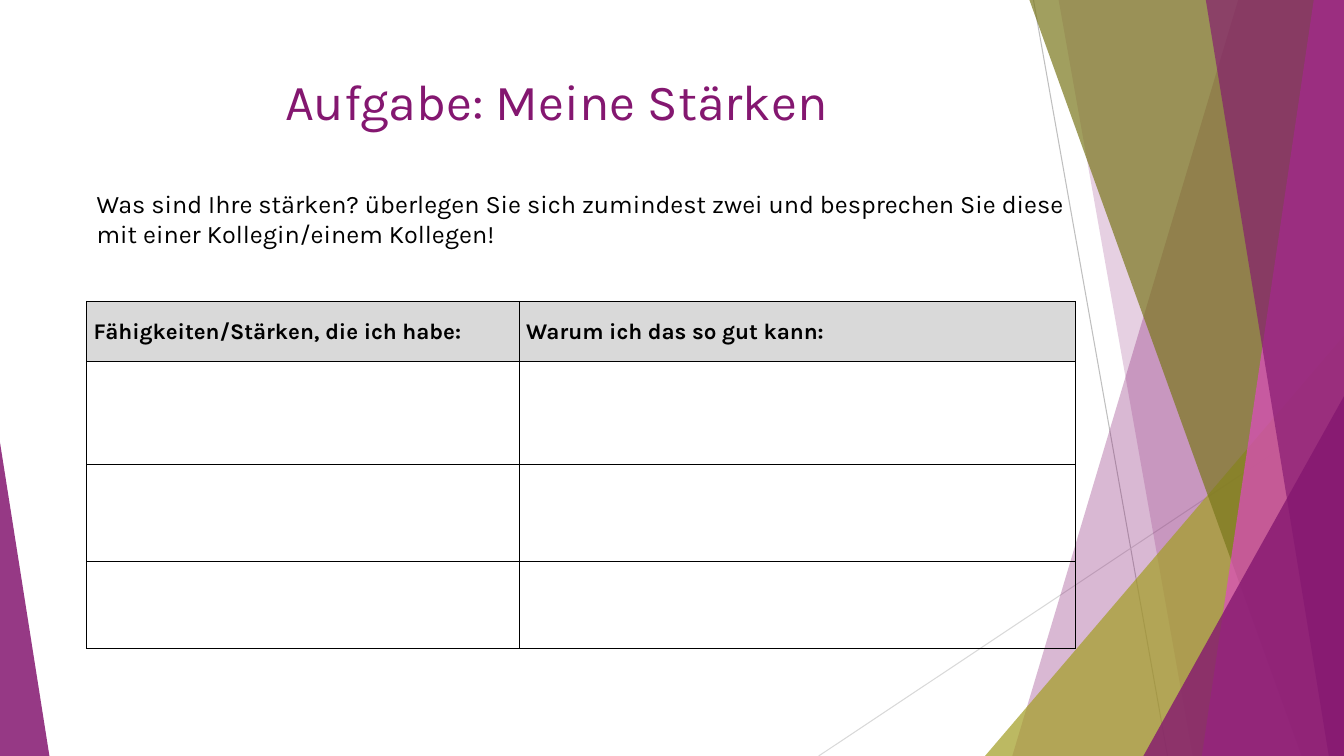
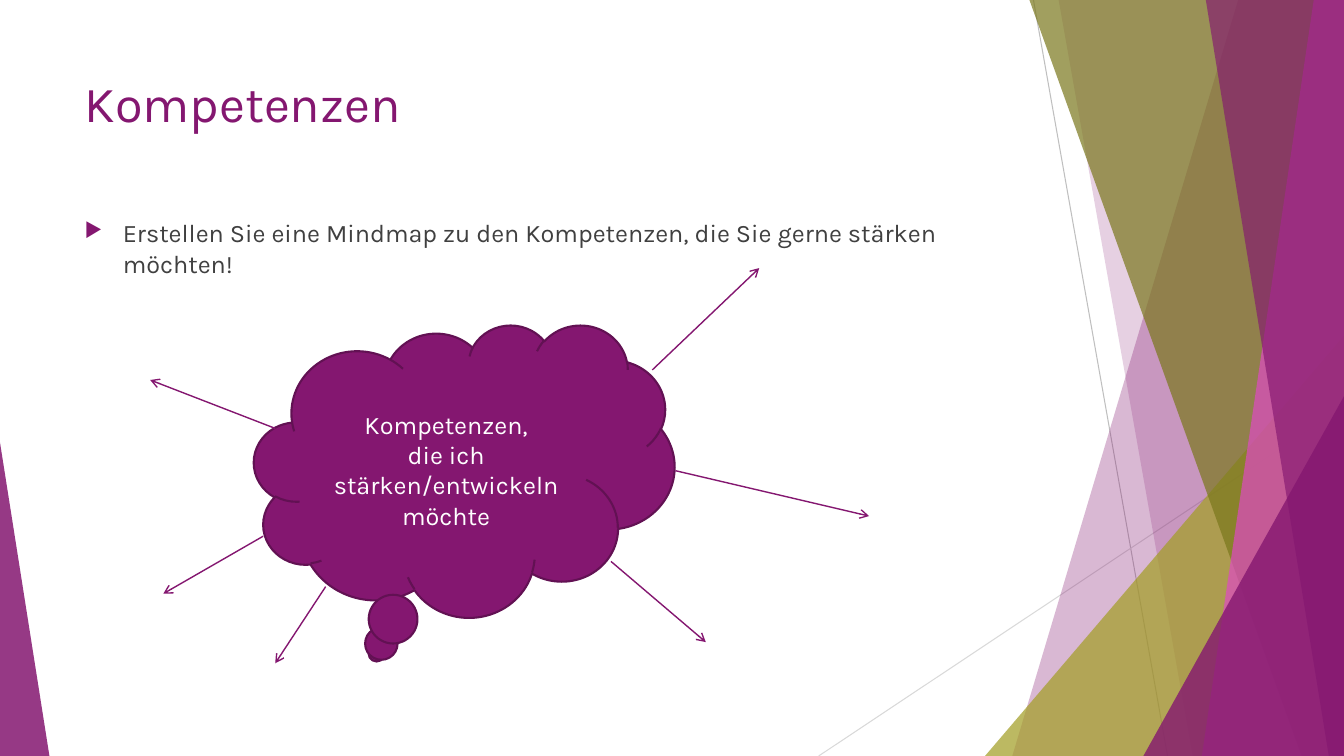
from pptx import Presentation
from pptx.dml.color import RGBColor
from pptx.enum.shapes import MSO_CONNECTOR, MSO_SHAPE
from pptx.enum.text import MSO_ANCHOR, PP_ALIGN
from pptx.oxml.ns import qn
from pptx.util import Pt
from lxml.etree import SubElement

PX = 9144  # EMU, 100 px to the inch
WIDTH, HEIGHT = 1333, 750
FONT = "Karla"

PURPLE = RGBColor(0x84, 0x17, 0x70)
DARK_PURPLE = RGBColor(0x62, 0x11, 0x53)
PINK = RGBColor(0xDF, 0x4A, 0xC4)
OLIVE = RGBColor(0xA3, 0x9E, 0x26)
DARK_OLIVE = RGBColor(0x7A, 0x77, 0x1C)
WHITE = RGBColor(0xFF, 0xFF, 0xFF)
BLACK = RGBColor(0x00, 0x00, 0x00)
BODY_GRAY = RGBColor(0x40, 0x40, 0x40)
LINE_GRAY = RGBColor(0xBF, 0xBF, 0xBF)
LIGHT_GRAY = RGBColor(0xD9, 0xD9, 0xD9)


def px(*lengths):
    return [length * PX for length in lengths]


def fill_flat(shape, color, opacity):
    """Fill without outline or shadow; opacity is in percent."""
    shape.shadow.inherit = False
    shape.line.fill.background()
    shape.fill.solid()
    shape.fill.fore_color.rgb = color
    tone = shape.fill._xPr.find(qn("a:solidFill"))[0]
    SubElement(tone, qn("a:alpha"), val=str(opacity * 1000))


def add_band(slide, top_x, bottom_x, color, opacity):
    """Slanted band that reaches from its left edge to the slide's right edge."""
    builder = slide.shapes.build_freeform(top_x, 0, scale=PX)
    builder.add_line_segments([(WIDTH, 0), (WIDTH, HEIGHT), (bottom_x, HEIGHT)])
    fill_flat(builder.convert_to_shape(), color, opacity)


def add_wedge(slide, left, top, width, apex, color, opacity):
    """Triangle standing on the slide's bottom; apex 0 is left, 1 is right."""
    wedge = slide.shapes.add_shape(
        MSO_SHAPE.ISOSCELES_TRIANGLE, *px(left, top, width, HEIGHT - top))
    wedge.adjustments[0] = apex
    fill_flat(wedge, color, opacity)


def add_line(slide, start, end, color, weight, arrow=False):
    line = slide.shapes.add_connector(MSO_CONNECTOR.STRAIGHT, *px(*start, *end))
    line.line.color.rgb = color
    line.line.width = Pt(weight)
    if arrow:
        SubElement(line.line._get_or_add_ln(), qn("a:tailEnd"), type="arrow")
    SubElement(line._element.spPr, qn("a:effectLst"))


def style_paragraph(paragraph, size, color, align, bold=False):
    paragraph.alignment = align
    font = paragraph.font
    font.name, font.size, font.bold = FONT, Pt(size), bold
    font.color.rgb = color


def add_text(slide, box, lines, size, color, align=PP_ALIGN.LEFT):
    frame = slide.shapes.add_textbox(*px(*box)).text_frame
    frame.word_wrap = True
    frame.text = "\n".join(lines)
    for paragraph in frame.paragraphs:
        style_paragraph(paragraph, size, color, align)
    return frame


def add_bullet(paragraph, indent):
    paragraph.space_before = Pt(10)
    properties = paragraph._p.get_or_add_pPr()
    properties.set("marL", str(indent * PX))
    properties.set("indent", str(-indent * PX))
    tint = SubElement(properties, qn("a:buClr"))
    SubElement(tint, qn("a:srgbClr"), val=str(PURPLE))
    size = SubElement(properties, qn("a:buSzPct"), val="80000")
    mark = SubElement(properties, qn("a:buChar"), char="▶")
    run_defaults = properties.find(qn("a:defRPr"))
    for part in (tint, size, mark):
        run_defaults.addprevious(part)


def add_borders(cell, color, weight):
    properties = cell._tc.get_or_add_tcPr()
    for position, side in enumerate(("lnL", "lnR", "lnT", "lnB")):
        border = SubElement(properties, qn(f"a:{side}"), w=str(Pt(weight)))
        fill = SubElement(border, qn("a:solidFill"))
        SubElement(fill, qn("a:srgbClr"), val=str(color))
        properties.insert(position, border)


def add_answer_table(slide, left, top, columns, rows, headings):
    """Table with a gray heading row above empty rows to fill in."""
    table = slide.shapes.add_table(
        len(rows), len(columns), *px(left, top, sum(columns), sum(rows))).table
    for column, width in zip(table.columns, columns):
        column.width = width * PX
    for row, height in zip(table.rows, rows):
        row.height = height * PX
    for cell in table.iter_cells():
        cell.fill.background()
        add_borders(cell, BLACK, 1)
    for cell, heading in zip(table.rows[0].cells, headings):
        cell.fill.solid()
        cell.fill.fore_color.rgb = LIGHT_GRAY
        cell.vertical_anchor = MSO_ANCHOR.MIDDLE
        cell.margin_left = cell.margin_right = 7 * PX
        cell.margin_top = cell.margin_bottom = 0
        cell.text = heading
        paragraph = cell.text_frame.paragraphs[0]
        paragraph.line_spacing = 1.07
        style_paragraph(paragraph, 16, BLACK, PP_ALIGN.JUSTIFY, bold=True)


def add_decorated_slide(deck):
    slide = deck.slides.add_slide(deck.slide_layouts[6])
    add_line(slide, (1025, 0), (1158, HEIGHT), LINE_GRAY, 0.75)
    add_line(slide, (WIDTH, 403), (812, HEIGHT), LIGHT_GRAY, 0.75)
    add_band(slide, 1228, 1004, PURPLE, 30)
    add_band(slide, 1050, 1183, PURPLE, 20)
    add_wedge(slide, 977, 333, 356, 1, OLIVE, 72)
    add_band(slide, 1021, 1291, DARK_OLIVE, 70)
    add_band(slide, 1303, 1192, PINK, 70)
    add_band(slide, 1196, 1318, PURPLE, 65)
    add_wedge(slide, 1134, 393, 199, 1, PURPLE, 80)
    add_wedge(slide, 0, 439, 49, 0, PURPLE, 85)
    return slide


def add_title(slide, left, top, title, align=PP_ALIGN.LEFT):
    add_text(slide, (left, top, 940, 114), [title], 36, PURPLE, align)


def build_strengths(deck):
    slide = add_decorated_slide(deck)
    add_title(slide, 82, 65, "Aufgabe: Meine Stärken", PP_ALIGN.CENTER)
    add_answer_table(
        slide, 86, 299, (429, 552), (60, 102, 96, 86),
        ("Fähigkeiten/Stärken, die ich habe:", "Warum ich das so gut kann:"))
    add_text(slide, (86, 182, 981, 71), [
        "Was sind Ihre stärken? überlegen Sie sich zumindest zwei und "
        "besprechen Sie diese mit einer Kollegin/einem Kollegen!"], 18, BLACK)


def build_competences(deck):
    slide = add_decorated_slide(deck)
    add_title(slide, 74, 67, "Kompetenzen")
    task = add_text(slide, (74, 211, 940, 450), [
        "Erstellen Sie eine Mindmap zu den Kompetenzen, die Sie gerne "
        "stärken möchten!"], 18, BODY_GRAY)
    add_bullet(task.paragraphs[0], 38)

    cloud = slide.shapes.add_shape(MSO_SHAPE.CLOUD_CALLOUT, *px(252, 322, 417, 290))
    cloud.shadow.inherit = False
    cloud.fill.solid()
    cloud.fill.fore_color.rgb = PURPLE
    cloud.line.color.rgb = DARK_PURPLE
    cloud.line.width = Pt(1.5)
    add_text(slide, (317, 401, 251, 131),
             ["Kompetenzen,", "die ich stärken/entwickeln möchte"],
             18, WHITE, PP_ALIGN.CENTER)

    branches = (
        ((647, 367), (753, 266)),
        ((670, 467), (862, 512)),
        ((606, 557), (700, 637)),
        ((273, 425), (149, 377)),
        ((261, 532), (162, 589)),
        ((323, 582), (273, 658)),
    )
    for start, end in branches:
        add_line(slide, start, end, PURPLE, 1, arrow=True)


def main():
    deck = Presentation()
    deck.slide_width, deck.slide_height = px(WIDTH, HEIGHT)
    build_strengths(deck)
    build_competences(deck)
    deck.save("out.pptx")


if __name__ == "__main__":
    main()
